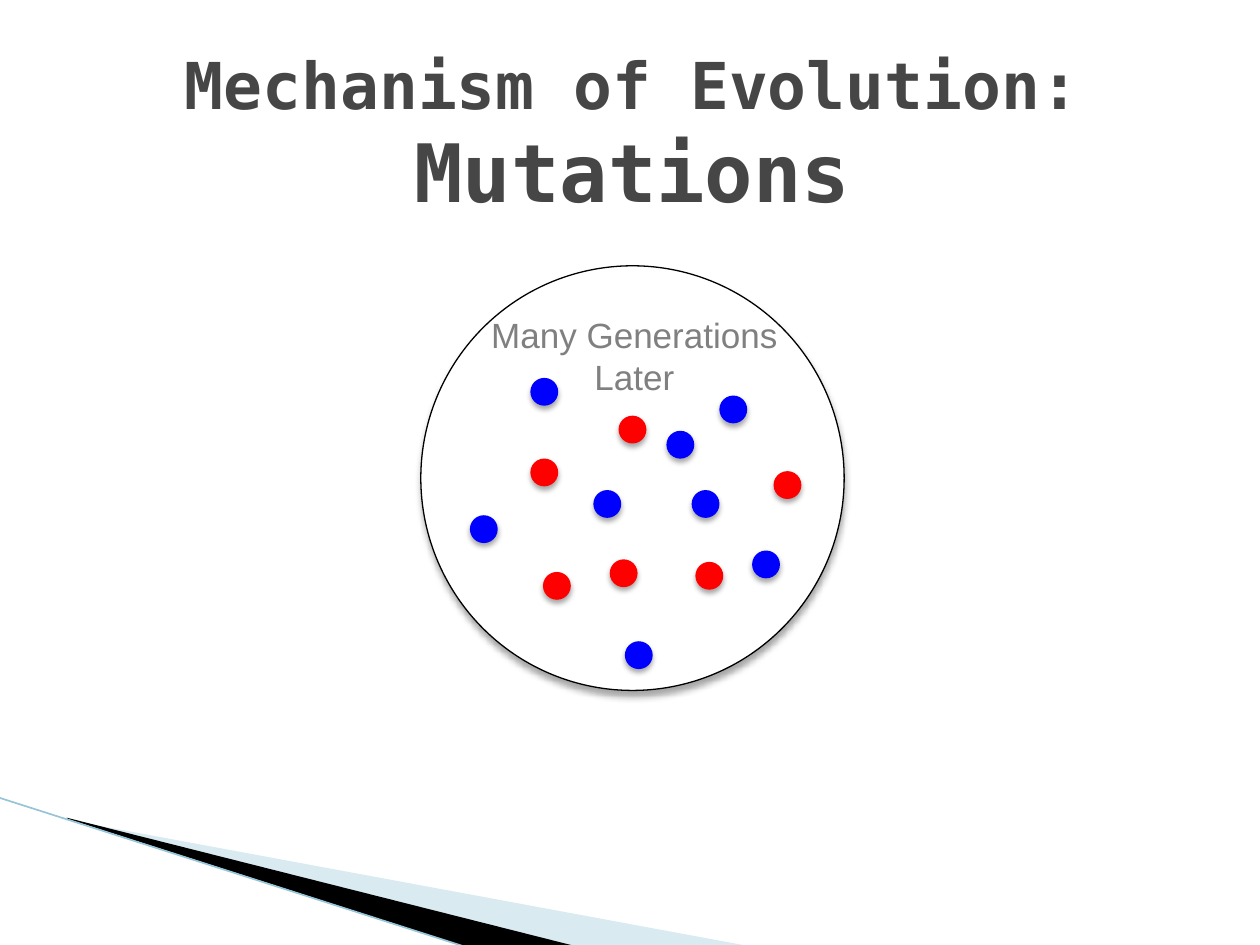
"""Build the slide on mutations as a mechanism of evolution."""
from lxml import etree
from pptx import Presentation
from pptx.dml.color import RGBColor
from pptx.enum.shapes import MSO_CONNECTOR as Connector, MSO_SHAPE as Preset
from pptx.enum.text import MSO_ANCHOR as Anchor, PP_ALIGN as Align
from pptx.oxml.ns import qn
from pptx.util import Inches, Pt

COLORS = {
    "title": "464646", "caption": "808080", "paper": "FFFFFF", "ink": "000000",
    "red": "FF0000", "blue": "0000FF", "pale": "A0CBDC", "edge": "97C5D8",
}


def add_disc(left, top, width, height, fill, line, weight, blur, distance):
    disc = slide.shapes.add_shape(
        Preset.OVAL, Inches(left), Inches(top), Inches(width), Inches(height))
    disc.fill.solid()
    disc.fill.fore_color.rgb = RGBColor.from_string(COLORS[fill])
    disc.line.color.rgb = RGBColor.from_string(COLORS[line])
    disc.line.width = Pt(weight)
    disc.shadow.inherit = False
    effects = disc.element.spPr.find(qn("a:effectLst"))
    shadow = etree.SubElement(
        effects, qn("a:outerShdw"), blurRad=str(Pt(blur)), dist=str(Pt(distance)),
        dir="5400000", rotWithShape="0")
    tint = etree.SubElement(shadow, qn("a:srgbClr"), val=COLORS["ink"])
    etree.SubElement(tint, qn("a:alpha"), val="35000")


def add_text(left, top, width, height, anchor, font_name, color, bold, pieces):
    box = slide.shapes.add_textbox(
        Inches(left), Inches(top), Inches(width), Inches(height))
    frame = box.text_frame
    frame.word_wrap = True
    frame.vertical_anchor = anchor
    paragraph = frame.paragraphs[0]
    paragraph.alignment = Align.CENTER
    for words, size in pieces:
        run = paragraph.add_run()
        run.text = words
        run.font.name = font_name
        run.font.size = Pt(size)
        run.font.bold = bold
        run.font.color.rgb = RGBColor.from_string(COLORS[color])
    return frame


deck = Presentation()
deck.slide_width = Inches(10)
deck.slide_height = Inches(7.5)
slide = deck.slides.add_slide(deck.slide_layouts[6])

wedges = [
    ("pale", 40, [(0.55, 6.51), (5.95, 7.51), (4.56, 7.51), (0.55, 6.5)]),
    ("ink", 100, [(0.53, 6.49), (4.57, 7.51), (3.72, 7.52), (0.54, 6.5)]),
]
for color, opacity, points in wedges:
    start, *corners = [(Inches(x), Inches(y)) for x, y in points]
    builder = slide.shapes.build_freeform(*start)
    builder.add_line_segments(corners, close=True)
    wedge = builder.convert_to_shape()
    wedge.fill.solid()
    wedge.fill.fore_color.rgb = RGBColor.from_string(COLORS[color])
    wedge.line.fill.background()
    wedge.shadow.inherit = False
    if opacity < 100:
        tint = wedge.element.spPr.find(qn("a:solidFill"))[0]
        etree.SubElement(tint, qn("a:alpha"), val=str(opacity * 1000))

edge = slide.shapes.add_connector(
    Connector.STRAIGHT, Inches(-0.01), Inches(6.33), Inches(3.71), Inches(7.52))
edge.line.color.rgb = RGBColor.from_string(COLORS["edge"])
edge.line.width = Pt(0.95)
etree.SubElement(edge.element.spPr, qn("a:effectLst"))

add_text(0.96, 0.42, 8.12, 1.25, Anchor.MIDDLE, "DejaVu Sans Mono", "title", True,
         [("Mechanism of Evolution: ", 36.9), ("Mutations", 46)])

add_disc(3.34, 2.11, 3.36, 3.37, "paper", "ink", 0.75, 4, 3)

population = {
    "red": [(4.92, 3.31), (4.22, 3.65), (4.85, 4.45), (5.53, 4.47),
            (6.15, 3.75), (4.32, 4.55)],
    "blue": [(5.3, 3.43), (5.5, 3.9), (4.22, 3.01), (4.72, 3.9),
             (5.72, 3.15), (5.98, 4.38), (4.97, 5.1), (3.74, 4.1)],
}
for color, places in population.items():
    for left, top in places:
        add_disc(left, top, 0.2, 0.2, color, color, 1.5, 3, 2)

caption = add_text(3.7, 2.39, 2.67, 0.5, Anchor.TOP, "Arial", "caption", False,
                   [("Many Generations Later", 20)])
caption.margin_top = caption.margin_bottom = Inches(0.1)

deck.save("out.pptx")
